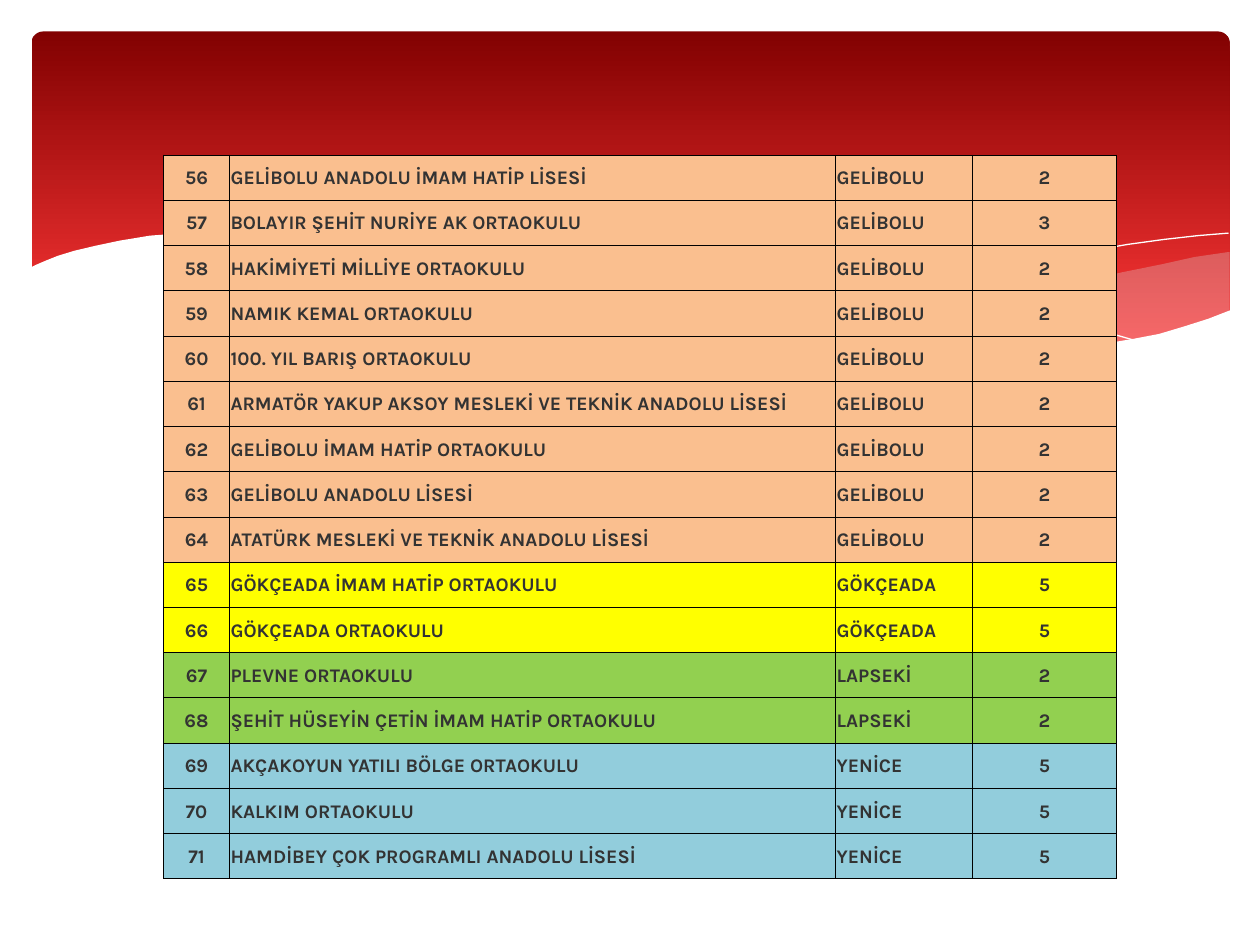
from dataclasses import dataclass
from typing import Optional

from lxml import etree
from pptx import Presentation
from pptx.dml.color import RGBColor
from pptx.enum.shapes import MSO_SHAPE
from pptx.enum.text import MSO_ANCHOR, PP_ALIGN
from pptx.oxml import parse_xml
from pptx.oxml.ns import nsdecls, qn
from pptx.util import Emu, Inches, Pt

ROUNDED = MSO_SHAPE.ROUNDED_RECTANGLE
MIDDLE = MSO_ANCHOR.MIDDLE
LEFT, CENTER = PP_ALIGN.LEFT, PP_ALIGN.CENTER

SLIDE_WIDTH, SLIDE_HEIGHT = Inches(10), Inches(7.5)
GRID_COLUMNS, GRID_ROWS = 1000, 750
FIRST_NUMBER = 56
COLUMN_SPANS = (52, 481, 109, 114)
COLUMN_ALIGNMENTS = (CENTER, LEFT, LEFT, CENTER)
TABLE_COLUMN, TABLE_ROW, TABLE_ROW_SPAN = 130, 123, 575

COLORS = {
    "banner_top": "820101",
    "banner_bottom": "FE3737",
    "mist": "DEDEE0",
    "white": "FFFFFF",
    "text": "333333",
    "border": "000000",
    "GELİBOLU": "FABF8F",
    "GÖKÇEADA": "FFFF00",
    "LAPSEKİ": "92D050",
    "YENİCE": "92CDDC",
}


@dataclass(frozen=True)
class Wave:
    """Outline in grid columns and rows, filled when closed and stroked when open."""
    points: tuple[tuple[int, int], ...]
    color: str
    closed: bool = True
    opacity: Optional[int] = None


@dataclass(frozen=True)
class School:
    """One school with its district and its number of places."""
    name: str
    district: str
    places: int


WAVES = (
    Wave(((975, 200), (948, 204), (921, 210), (891, 216), (861, 223), (805, 237), (753, 248),
          (706, 257), (661, 265), (691, 269), (719, 272), (745, 275), (769, 277), (803, 278),
          (835, 277), (863, 275), (889, 272), (913, 267), (935, 262), (949, 257), (963, 252),
          (976, 247), (976, 200)), "mist", opacity=29),
    Wave(((893, 273), (866, 269), (837, 265), (807, 260), (775, 254), (741, 247), (706, 240),
          (668, 231), (629, 222), (598, 214), (569, 208), (541, 203), (514, 198), (489, 194),
          (442, 189), (399, 186), (361, 185), (328, 187), (299, 189), (286, 191), (323, 196),
          (362, 203), (404, 211), (449, 222), (530, 240), (601, 255), (650, 264), (695, 270),
          (736, 275), (773, 277), (807, 278), (838, 278), (867, 276), (893, 273)),
         "mist", opacity=40),
    Wave(((309, 195), (328, 192), (353, 189), (387, 187), (433, 187), (469, 189), (510, 192),
          (556, 197), (608, 204), (665, 213), (727, 226), (795, 241), (831, 251), (869, 261),
          (907, 272)), "white", closed=False),
    Wave(((613, 257), (653, 246), (695, 235), (748, 223), (806, 210), (866, 199), (895, 194),
          (924, 190), (951, 187), (975, 185)), "white", closed=False),
    Wave(((977, 246), (959, 253), (940, 259), (920, 265), (899, 269), (875, 273), (850, 275),
          (823, 277), (793, 276), (761, 275), (726, 272), (688, 268), (648, 262), (603, 254),
          (555, 245), (503, 233), (447, 220), (391, 207), (340, 197), (292, 190), (250, 186),
          (211, 184), (177, 184), (146, 185), (119, 187), (95, 191), (76, 195), (59, 199),
          (46, 203), (36, 207), (29, 210), (23, 213), (23, 329), (977, 329), (977, 246)), "white"),
)

SCHOOLS = (
    School("GELİBOLU ANADOLU İMAM HATİP LİSESİ", "GELİBOLU", 2),
    School("BOLAYIR ŞEHİT NURİYE AK ORTAOKULU", "GELİBOLU", 3),
    School("HAKİMİYETİ MİLLİYE ORTAOKULU", "GELİBOLU", 2),
    School("NAMIK KEMAL ORTAOKULU", "GELİBOLU", 2),
    School("100. YIL BARIŞ ORTAOKULU", "GELİBOLU", 2),
    School("ARMATÖR YAKUP AKSOY MESLEKİ VE TEKNİK ANADOLU LİSESİ", "GELİBOLU", 2),
    School("GELİBOLU İMAM HATİP ORTAOKULU", "GELİBOLU", 2),
    School("GELİBOLU ANADOLU LİSESİ", "GELİBOLU", 2),
    School("ATATÜRK MESLEKİ VE TEKNİK ANADOLU LİSESİ", "GELİBOLU", 2),
    School("GÖKÇEADA İMAM HATİP ORTAOKULU", "GÖKÇEADA", 5),
    School("GÖKÇEADA ORTAOKULU", "GÖKÇEADA", 5),
    School("PLEVNE ORTAOKULU", "LAPSEKİ", 2),
    School("ŞEHİT HÜSEYİN ÇETİN İMAM HATİP ORTAOKULU", "LAPSEKİ", 2),
    School("AKÇAKOYUN YATILI BÖLGE ORTAOKULU", "YENİCE", 5),
    School("KALKIM ORTAOKULU", "YENİCE", 5),
    School("HAMDİBEY ÇOK PROGRAMLI ANADOLU LİSESİ", "YENİCE", 5),
)


def across(columns: float) -> Emu:
    """Return the width of a number of grid columns."""
    return Emu(round(SLIDE_WIDTH * columns / GRID_COLUMNS))


def down(rows: float) -> Emu:
    """Return the height of a number of grid rows."""
    return Emu(round(SLIDE_HEIGHT * rows / GRID_ROWS))


def rgb(name: str) -> RGBColor:
    """Look up a named colour."""
    return RGBColor.from_string(COLORS[name])


def draw_banner(shapes) -> None:
    """Draw the red rounded banner with its downward gradient."""
    banner = shapes.add_shape(ROUNDED, across(25), down(25), across(951), down(270))
    banner.adjustments[0] = 0.034
    banner.shadow.inherit = False
    banner.line.fill.background()
    banner.fill.gradient()
    banner.fill.gradient_angle = 270
    for stop, name, position in zip(banner.fill.gradient_stops,
                                    ("banner_top", "banner_bottom"), (0, 0.9)):
        stop.color.rgb = rgb(name)
        stop.position = position


def draw_wave(shapes, wave: Wave) -> None:
    """Draw one wave as a filled area or as a hairline."""
    start, *others = [(across(x), down(y)) for x, y in wave.points]
    builder = shapes.build_freeform(*start)
    builder.add_line_segments(others, close=wave.closed)
    outline = builder.convert_to_shape()
    outline.shadow.inherit = False
    if not wave.closed:
        outline.fill.background()
        outline.line.color.rgb = rgb(wave.color)
        outline.line.width = Pt(0)
        return
    outline.line.fill.background()
    outline.fill.solid()
    outline.fill.fore_color.rgb = rgb(wave.color)
    if wave.opacity is not None:
        color = outline.fill._xPr.find(qn("a:solidFill"))[0]
        etree.SubElement(color, qn("a:alpha"), val=str(wave.opacity * 1000))


def write_text(frame, text: str, *, align=LEFT, size: float = 11, font: str = "Karla",
               color: str = "text", bold: bool = True) -> None:
    """Write one formatted paragraph into a text frame."""
    paragraph = frame.paragraphs[0]
    paragraph.alignment = align
    run = paragraph.add_run()
    run.text = text
    run.font.size, run.font.name, run.font.bold = Pt(size), font, bold
    run.font.color.rgb = rgb(color)


def style_cell(cell, fill: str) -> None:
    """Give a cell its margins, borders and fill."""
    cell.vertical_anchor = MIDDLE
    cell.margin_left = cell.margin_right = cell.margin_top = Inches(0.01)
    cell.margin_bottom = 0
    properties = cell._tc.get_or_add_tcPr()
    for side in ("lnL", "lnR", "lnT", "lnB"):
        properties.append(parse_xml(
            f'<a:{side} {nsdecls("a")} w="{Pt(0.5)}"><a:solidFill>'
            f'<a:srgbClr val="{COLORS["border"]}"/></a:solidFill></a:{side}>'))
    cell.fill.solid()
    cell.fill.fore_color.rgb = rgb(fill)


def draw_schools(shapes, schools: tuple[School, ...]) -> None:
    """Draw the numbered table of schools, coloured by district."""
    table = shapes.add_table(len(schools), len(COLUMN_SPANS), across(TABLE_COLUMN),
                             down(TABLE_ROW), across(sum(COLUMN_SPANS)),
                             down(TABLE_ROW_SPAN)).table
    table.first_row = table.horz_banding = False
    for column, span in zip(table.columns, COLUMN_SPANS):
        column.width = across(span)
    for number, (row, school) in enumerate(zip(table.rows, schools), FIRST_NUMBER):
        row.height = down(TABLE_ROW_SPAN / len(schools))
        values = (number, school.name, school.district, school.places)
        for cell, value, align in zip(row.cells, values, COLUMN_ALIGNMENTS):
            style_cell(cell, school.district)
            write_text(cell.text_frame, str(value), align=align)


def main() -> None:
    """Build the slide and save it."""
    deck = Presentation()
    deck.slide_width, deck.slide_height = SLIDE_WIDTH, SLIDE_HEIGHT
    shapes = deck.slides.add_slide(deck.slide_layouts[6]).shapes
    draw_banner(shapes)
    for wave in WAVES:
        draw_wave(shapes, wave)
    draw_schools(shapes, SCHOOLS)
    deck.save("out.pptx")


if __name__ == "__main__":
    main()
